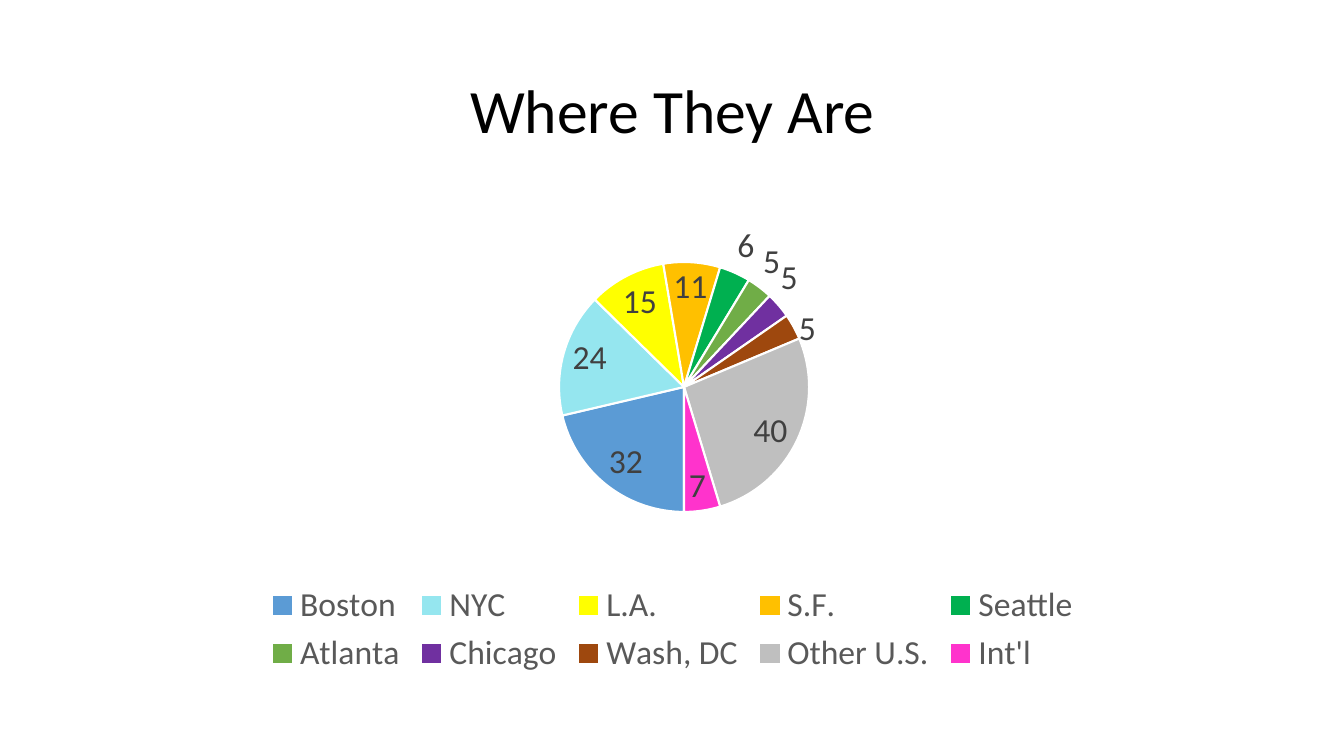
from lxml import etree
from pptx import Presentation
from pptx.chart.data import CategoryChartData
from pptx.dml.color import RGBColor
from pptx.enum.chart import XL_CHART_TYPE, XL_LABEL_POSITION, XL_LEGEND_POSITION
from pptx.enum.text import MSO_ANCHOR, PP_ALIGN
from pptx.oxml.ns import qn
from pptx.util import Inches, Pt

PIE = XL_CHART_TYPE.PIE
BEST_FIT = XL_LABEL_POSITION.BEST_FIT
BOTTOM = XL_LEGEND_POSITION.BOTTOM
MIDDLE = MSO_ANCHOR.MIDDLE
CENTER = PP_ALIGN.CENTER

FONT = "Calibri"
COLORS = {"title": "000000", "label": "404040", "legend": "595959", "edge": "FFFFFF"}

# City, count, slice colour
CITIES = [
    ("Boston", 32, "5B9BD5"),
    ("NYC", 24, "95E6EF"),
    ("L.A.", 15, "FFFF00"),
    ("S.F.", 11, "FFC000"),
    ("Seattle", 6, "00B050"),
    ("Atlanta", 5, "70AD47"),
    ("Chicago", 5, "7030A0"),
    ("Wash, DC", 5, "9E480E"),
    ("Other U.S.", 40, "BFBFBF"),
    ("Int'l", 7, "FF33CC"),
]


def set_font(font, size, color):
    font.name = FONT
    font.size = Pt(size)
    font.color.rgb = RGBColor.from_string(color)


def add_title(page, text, left, top, width, height):
    title = page.shapes.title
    title.left, title.top = Inches(left), Inches(top)
    title.width, title.height = Inches(width), Inches(height)
    title.text_frame.text = text
    title.text_frame.vertical_anchor = MIDDLE
    para = title.text_frame.paragraphs[0]
    para.alignment = CENTER
    para.line_spacing = 0.9
    set_font(para.font, 44, COLORS["title"])


def place_pie(chart, start_angle, x, y, w, h):
    """Turn the pie and set its box as fractions of the chart."""
    plot_area = chart.element.find(".//" + qn("c:plotArea"))
    pie = plot_area.find(qn("c:pieChart"))
    etree.SubElement(pie, qn("c:firstSliceAng")).set("val", str(start_angle))

    for old_layout in plot_area.findall(qn("c:layout")):
        plot_area.remove(old_layout)
    layout = etree.Element(qn("c:layout"))
    manual = etree.SubElement(layout, qn("c:manualLayout"))
    settings = {"layoutTarget": "inner", "xMode": "edge", "yMode": "edge",
                "x": x, "y": y, "w": w, "h": h}
    for tag, value in settings.items():
        etree.SubElement(manual, qn("c:" + tag)).set("val", str(value))
    plot_area.insert(0, layout)


def add_city_pie(page, left, top, width, height):
    data = CategoryChartData()
    data.categories = [city for city, _, _ in CITIES]
    data.add_series("Series 1", [count for _, count, _ in CITIES])
    chart = page.shapes.add_chart(
        PIE, Inches(left), Inches(top), Inches(width), Inches(height), data).chart
    chart.has_title = False
    set_font(chart.font, 10, COLORS["title"])

    # Legend
    chart.has_legend = True
    chart.legend.position = BOTTOM
    chart.legend.include_in_layout = False
    set_font(chart.legend.font, 24, COLORS["legend"])

    # Slices
    plot = chart.plots[0]
    plot.vary_by_categories = True
    series = plot.series[0]
    for index, (_, _, color) in enumerate(CITIES):
        slice_format = series.points[index].format
        slice_format.fill.solid()
        slice_format.fill.fore_color.rgb = RGBColor.from_string(color)
        slice_format.line.color.rgb = RGBColor.from_string(COLORS["edge"])
        slice_format.line.width = Pt(1.5)

    # Value labels
    labels = series.data_labels
    labels.show_value = True
    labels.position = BEST_FIT
    set_font(labels.font, 24, COLORS["label"])

    place_pie(chart, 180, 0.4, 0.13, 0.22, 0.52)


def main():
    deck = Presentation()
    deck.slide_width, deck.slide_height = Inches(13.33), Inches(7.5)
    page = deck.slides.add_slide(deck.slide_layouts[5])
    add_title(page, "Where They Are", 0.92, 0.4, 11.5, 1.45)
    add_city_pie(page, 0.92, 1.98, 11.5, 4.77)
    deck.save("out.pptx")


if __name__ == "__main__":
    main()
